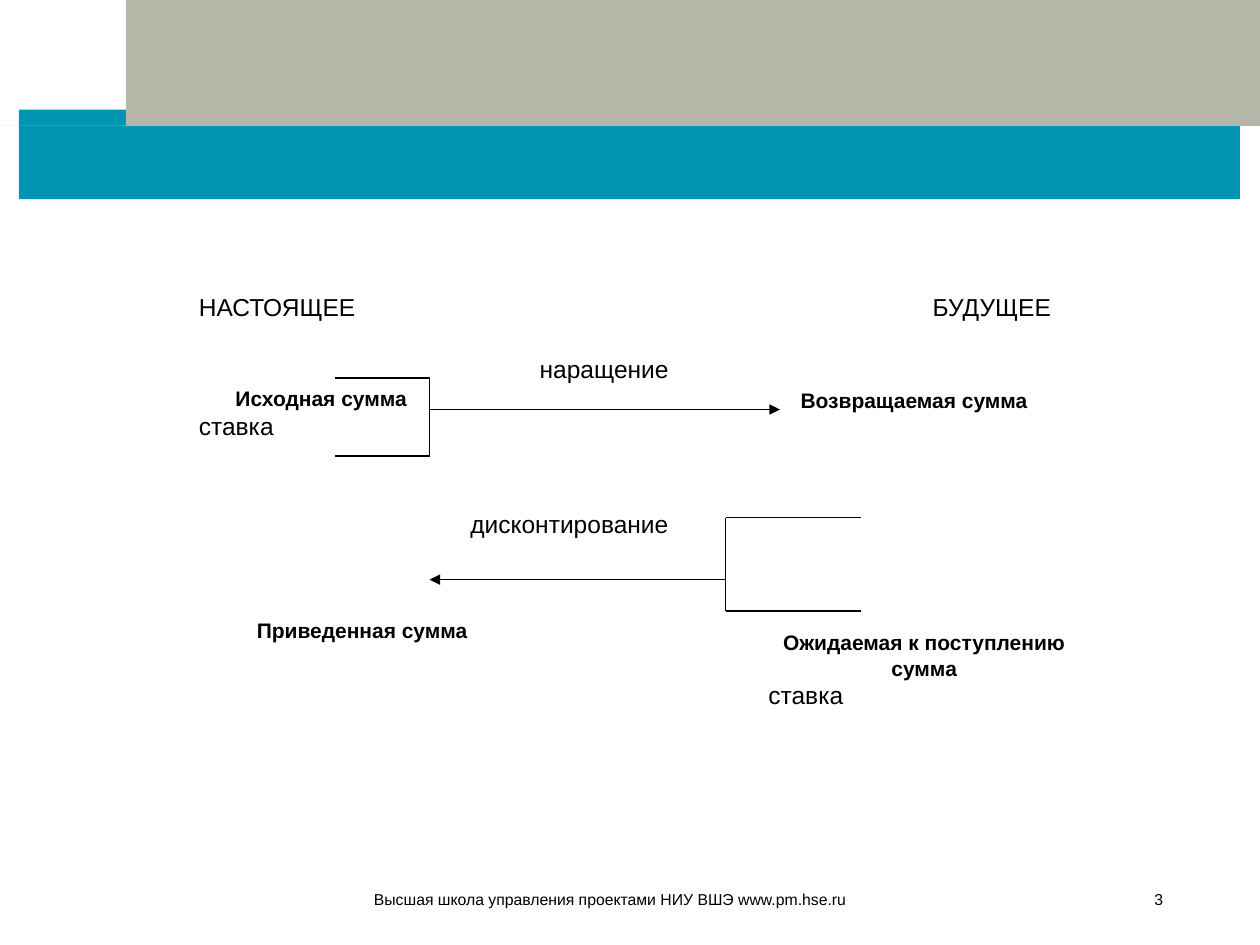
from lxml.etree import SubElement
from pptx import Presentation
from pptx.dml.color import RGBColor
from pptx.enum.shapes import MSO_CONNECTOR, MSO_SHAPE
from pptx.enum.text import MSO_ANCHOR, PP_ALIGN
from pptx.oxml.ns import qn
from pptx.util import Inches, Pt

# Content: label box (left, top, width, height) in inches, then its paragraphs
LEFT, CENTER, RIGHT = PP_ALIGN.LEFT, PP_ALIGN.CENTER, PP_ALIGN.RIGHT
PLAIN = {"size": 14, "bold": False, "after": 10}
STRONG = {"size": 12, "bold": True, "after": 0}
SMALL = {"size": 9, "bold": False, "after": 0}
LABELS = [
    ((1.48, 2.27, 2.35, 0.61), [("НАСТОЯЩЕЕ", LEFT, PLAIN)]),
    ((6.19, 2.27, 2.25, 0.74), [("БУДУЩЕЕ", RIGHT, PLAIN)]),
    ((1.48, 3.01, 2.14, 0.73), [("Исходная сумма", CENTER, STRONG),
                                ("ставка", LEFT, PLAIN)]),
    ((6.08, 3.03, 2.35, 0.61), [("Возвращаемая сумма", CENTER, STRONG)]),
    ((3.94, 2.76, 1.71, 0.37), [("наращение", CENTER, PLAIN)]),
    ((6.00, 4.95, 2.67, 0.98), [("Ожидаемая к поступлению сумма", CENTER, STRONG),
                                ("ставка", LEFT, PLAIN)]),
    ((1.59, 4.85, 2.57, 0.61), [("Приведенная сумма", CENTER, STRONG)]),
    ((3.49, 3.99, 2.06, 0.49), [("дисконтирование", CENTER, PLAIN)]),
]
FOOTER = [
    ((8.86, 7.06, 0.47, 0.15), "3"),
    ((1.14, 7.06, 5.67, 0.15),
     "Высшая школа управления проектами НИУ ВШЭ www.pm.hse.ru"),
]
# Bracket: open side, spine, top, bottom; arrow leaves the spine at a height
BRACKETS = [
    {"open": 2.66, "spine": 3.41, "top": 3.00, "bottom": 3.62, "arrow": 3.25, "tip": 6.19},
    {"open": 6.83, "spine": 5.76, "top": 4.11, "bottom": 4.85, "arrow": 4.60, "tip": 3.41},
]

# Header bands with a comb of teeth at the left
BAND_LEFT, BAND_RIGHT, BAND_TOP, BAND_HEIGHT = 0.15, 9.84, 0.16, 0.71
BAND_MIDDLE = BAND_TOP + BAND_HEIGHT
COMB_LEFT, COMB_RIGHT = 0.32, 0.63
GREY_TEETH = [0.71, 0.59, 0.43, 0.31]
LIGHT_TEETH = [1.27, 1.14, 0.99, BAND_MIDDLE]
LIGHT_BOTTOM = 1.42

presentation = Presentation()
presentation.slide_width, presentation.slide_height = Inches(10), Inches(7.5)
slide = presentation.slides.add_slide(presentation.slide_layouts[6])


def color(value):
    return RGBColor.from_string(value)


def paint(shape, fill, line=None):
    shape.shadow.inherit = False
    shape.fill.solid()
    shape.fill.fore_color.rgb = color(fill)
    if line:
        shape.line.color.rgb = color(line)
        shape.line.width = Pt(0.75)
    else:
        shape.line.fill.background()


def add_rectangle(box, fill, line=None):
    shape = slide.shapes.add_shape(MSO_SHAPE.RECTANGLE, *map(Inches, box))
    paint(shape, fill, line)
    return shape


def add_outline(points, fill):
    builder = slide.shapes.build_freeform(*points[0], scale=Inches(1))
    builder.add_line_segments(points[1:], close=True)
    shape = builder.convert_to_shape()
    paint(shape, fill)
    return shape


def comb(teeth):
    """Points going up the comb: each pair of heights is one slot edge."""
    sides = [(COMB_RIGHT, COMB_LEFT), (COMB_LEFT, COMB_RIGHT)]
    return [(x, y) for index, y in enumerate(teeth) for x in sides[index % 2]]


def write(frame, paragraphs, anchor):
    frame.word_wrap = True
    frame.vertical_anchor = anchor
    for index, (text, alignment, style) in enumerate(paragraphs):
        paragraph = frame.add_paragraph() if index else frame.paragraphs[0]
        paragraph.alignment = alignment
        paragraph.space_after = Pt(style["after"])
        run = paragraph.add_run()
        run.text = text
        run.font.name = "Arial"
        run.font.size = Pt(style["size"])
        run.font.bold = style["bold"]
        run.font.color.rgb = color("000000")


def add_line(start, end, arrow=False):
    line = slide.shapes.add_connector(
        MSO_CONNECTOR.STRAIGHT, *map(Inches, (*start, *end)))
    line.line.color.rgb = color("000000")
    line.line.width = Pt(0.75)
    if arrow:
        SubElement(line.line._get_or_add_ln(), qn("a:tailEnd"), type="triangle")
    SubElement(line._element.spPr, qn("a:effectLst"))


# Header
add_rectangle((BAND_LEFT, BAND_MIDDLE, BAND_RIGHT - BAND_LEFT, BAND_HEIGHT), "0094B3")
add_outline([(COMB_RIGHT, BAND_TOP), (BAND_RIGHT, BAND_TOP), (BAND_RIGHT, BAND_MIDDLE),
             (COMB_RIGHT, BAND_MIDDLE), *comb(GREY_TEETH)], "B5B5A8")
light = add_outline([(COMB_RIGHT, LIGHT_BOTTOM), *comb(LIGHT_TEETH)[:-1],
                     (BAND_LEFT, BAND_MIDDLE), (BAND_LEFT, LIGHT_BOTTOM)], "FFFFFF")
fill_color = light._element.spPr.find(qn("a:solidFill")).find(qn("a:srgbClr"))
SubElement(fill_color, qn("a:alpha"), val="60000")

# Labels
for box, paragraphs in LABELS:
    label = add_rectangle(box, "FFFFFF", "FFFFFF")
    write(label.text_frame, paragraphs, MSO_ANCHOR.TOP)

# Brackets with their arrows
for bracket in BRACKETS:
    spine, top, bottom = bracket["spine"], bracket["top"], bracket["bottom"]
    for y in (top, bottom):
        add_line((bracket["open"], y), (spine, y))
    add_line((spine, top), (spine, bottom))
    add_line((spine, bracket["arrow"]), (bracket["tip"], bracket["arrow"]), arrow=True)

# Footer and slide number
for box, text in FOOTER:
    text_box = slide.shapes.add_textbox(*map(Inches, box))
    write(text_box.text_frame, [(text, RIGHT, SMALL)], MSO_ANCHOR.MIDDLE)

presentation.save("out.pptx")
